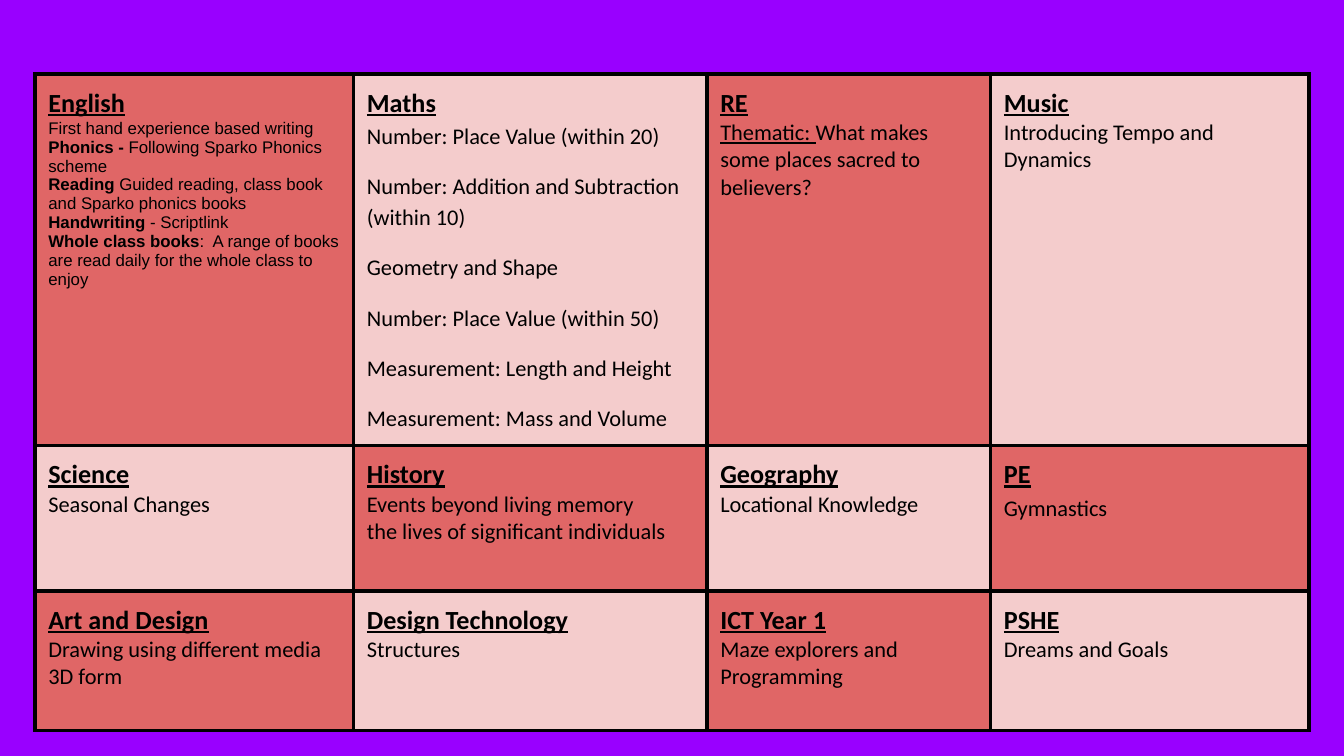
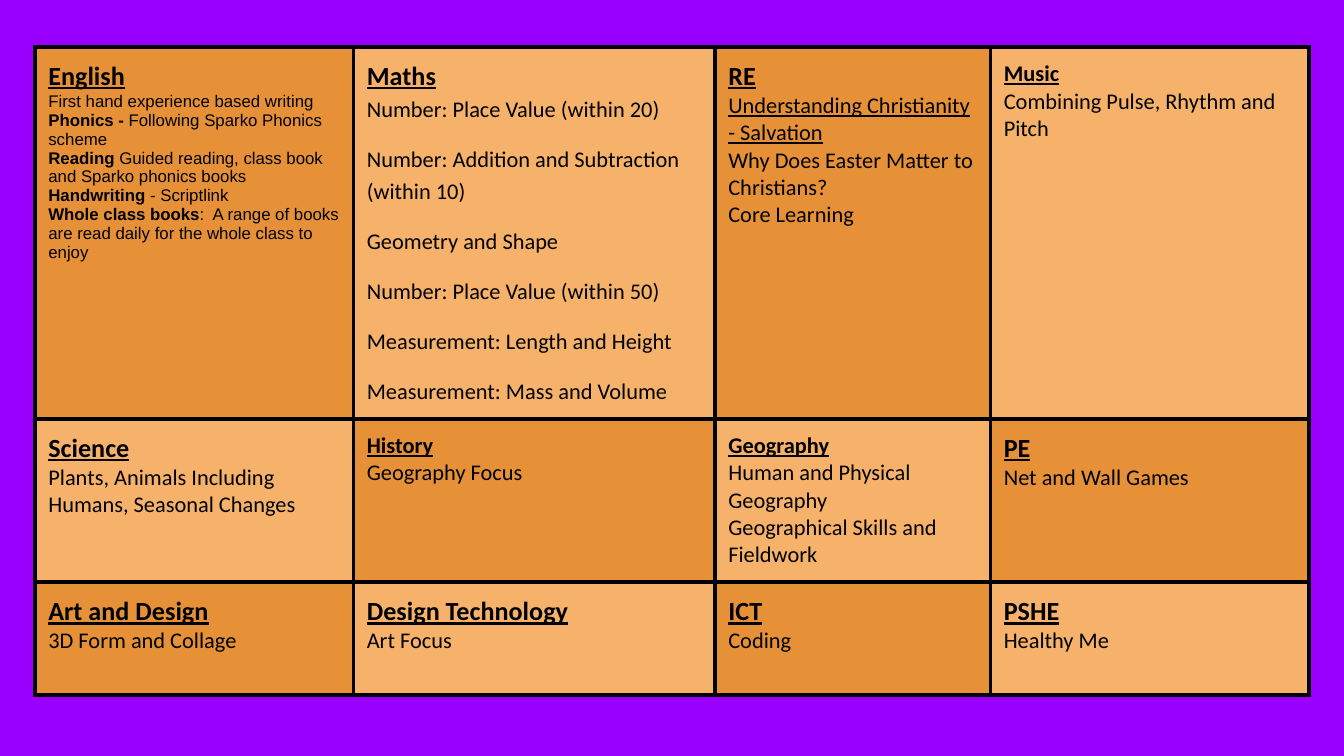
from dataclasses import dataclass

from lxml.etree import SubElement
from pptx import Presentation
from pptx.dml.color import RGBColor as Color
from pptx.oxml.ns import qn
from pptx.util import Inches, Pt


@dataclass(frozen=True)
class Theme:
    background: str = "9900FF"
    ink: str = "000000"
    red: tuple = ("E06666", "F4CCCC")
    orange: tuple = ("E69138", "F6B26B")
    font: str = "Calibri"
    note_font: str = "Arial"
    heading: int = 14
    body: int = 12
    note: int = 9
    border: float = 2.25
    padding: float = 0.1


THEME = Theme()


@dataclass
class Line:
    """One paragraph; pieces are (text, emphasised) pairs."""
    pieces: list
    size: int = THEME.body
    font: str = THEME.font
    emphasis: str = "underline"
    spacing: float = 1.0
    before: int = 0
    after: int = 0


@dataclass
class Subject:
    title: str
    lines: list
    title_size: int = THEME.heading


def plain(*texts):
    return [Line([(text, False)]) for text in texts]


def note(*pieces):
    return Line(list(pieces), THEME.note, THEME.note_font, "bold")


# Subjects that are the same on both pages
ENGLISH = Subject("English", [
    note(("First hand experience based writing ", False), ("Phonics -", True),
         (" Following Sparko Phonics scheme", False)),
    note(("Reading ", True),
         ("Guided reading, class book and Sparko phonics books", False)),
    note(("Handwriting", True), (" - Scriptlink", False)),
    note(("Whole class books", True),
         (":  A range of books are read daily for the whole class to enjoy", False)),
])

MATHS_TOPICS = [
    "Number: Place Value (within 20)",
    "Number: Addition and Subtraction (within 10)",
    "Geometry and Shape",
    "Number: Place Value (within 50)",
    "Measurement: Length and Height",
    "Measurement: Mass and Volume",
]
MATHS = Subject("Maths", [
    Line([(topic, False)], spacing=1.15, before=10 if index else 0,
         after=10 if topic == MATHS_TOPICS[-1] else 0)
    for index, topic in enumerate(MATHS_TOPICS)
])

FIRST_TERM = [
    [ENGLISH, MATHS,
     Subject("RE", [Line([("Thematic: ", True),
                          ("What makes some places sacred to believers?", False)])]),
     Subject("Music", plain("Introducing Tempo and Dynamics"))],
    [Subject("Science", plain("Seasonal Changes")),
     Subject("History", plain("Events beyond living memory",
                              "the lives of significant individuals")),
     Subject("Geography", plain("Locational Knowledge")),
     Subject("PE", [Line([("Gymnastics", False)], spacing=1.15)])],
    [Subject("Art and Design", plain("Drawing using different media", "3D form")),
     Subject("Design Technology", plain("Structures")),
     Subject("ICT Year 1", plain("Maze explorers and Programming")),
     Subject("PSHE", plain("Dreams and Goals"))],
]

SECOND_TERM = [
    [ENGLISH, MATHS,
     Subject("RE", [Line([("Understanding Christianity - Salvation", True)]),
                    *plain("Why Does Easter Matter to Christians?", "Core Learning")]),
     Subject("Music", plain("Combining Pulse, Rhythm and Pitch"), THEME.body)],
    [Subject("Science", plain("Plants, Animals Including Humans, Seasonal Changes")),
     Subject("History", plain("Geography Focus"), THEME.body),
     Subject("Geography", plain("Human and Physical Geography",
                                "Geographical Skills and Fieldwork"), THEME.body),
     Subject("PE", plain("Net and Wall Games"))],
    [Subject("Art and Design", plain("3D Form and Collage")),
     Subject("Design Technology", plain("Art Focus")),
     Subject("ICT", plain("Coding")),
     Subject("PSHE", plain("Healthy Me"))],
]


def set_font(font, name, size):
    font.name = name
    font.size = Pt(size)
    font.color.rgb = Color.from_string(THEME.ink)


def add_borders(cell):
    properties = cell._tc.get_or_add_tcPr()
    for position, side in enumerate(("lnL", "lnR", "lnT", "lnB")):
        line = SubElement(properties, qn(f"a:{side}"), w=str(Pt(THEME.border)))
        fill = SubElement(line, qn("a:solidFill"))
        SubElement(fill, qn("a:srgbClr"), val=THEME.ink)
        properties.insert(position, line)


def write_line(para, line):
    set_font(para.font, line.font, line.size)
    para.line_spacing = line.spacing
    para.space_before = Pt(line.before)
    para.space_after = Pt(line.after)
    for text, emphasised in line.pieces:
        span = para.add_run()
        span.text = text
        if emphasised:
            setattr(span.font, line.emphasis, True)


def fill_cell(cell, subject, shade):
    cell.fill.solid()
    cell.fill.fore_color.rgb = Color.from_string(shade)
    cell.margin_left = cell.margin_right = Inches(THEME.padding)
    cell.margin_top = cell.margin_bottom = Inches(THEME.padding)
    add_borders(cell)

    # Subject heading, then its topics
    heading = cell.text_frame.paragraphs[0]
    set_font(heading.font, THEME.font, subject.title_size)
    heading.font.bold = heading.font.underline = True
    heading.add_run().text = subject.title
    for line in subject.lines:
        write_line(cell.text_frame.add_paragraph(), line)


def add_curriculum(page, left, top, widths, heights, subjects, shades):
    frame = page.shapes.add_table(
        len(heights), len(widths), Inches(left), Inches(top),
        Inches(sum(widths)), Inches(sum(heights)))
    table = frame.table
    table.first_row = table.horz_banding = False
    for column, width in zip(table.columns, widths):
        column.width = Inches(width)
    for row, height in zip(table.rows, heights):
        row.height = Inches(height)

    # Chequered shading
    for y, row in enumerate(subjects):
        for x, subject in enumerate(row):
            fill_cell(table.cell(y, x), subject, shades[(x + y) % 2])


def add_term_page(deck, **curriculum):
    page = deck.slides.add_slide(deck.slide_layouts[6])
    page.background.fill.solid()
    page.background.fill.fore_color.rgb = Color.from_string(THEME.background)
    add_curriculum(page, left=0.26, **curriculum)


def main():
    deck = Presentation()
    # Widescreen, 16:9
    deck.slide_width = Inches(10)
    deck.slide_height = Inches(10 * 9 / 16)
    add_term_page(deck, top=0.55, widths=(2.37, 2.63, 2.11, 2.37),
                  heights=(2.76, 1.08, 1.04), subjects=FIRST_TERM, shades=THEME.red)
    add_term_page(deck, top=0.35, widths=(2.37, 2.69, 2.05, 2.37),
                  heights=(2.76, 1.21, 0.84), subjects=SECOND_TERM, shades=THEME.orange)
    deck.save("out.pptx")


if __name__ == "__main__":
    main()
